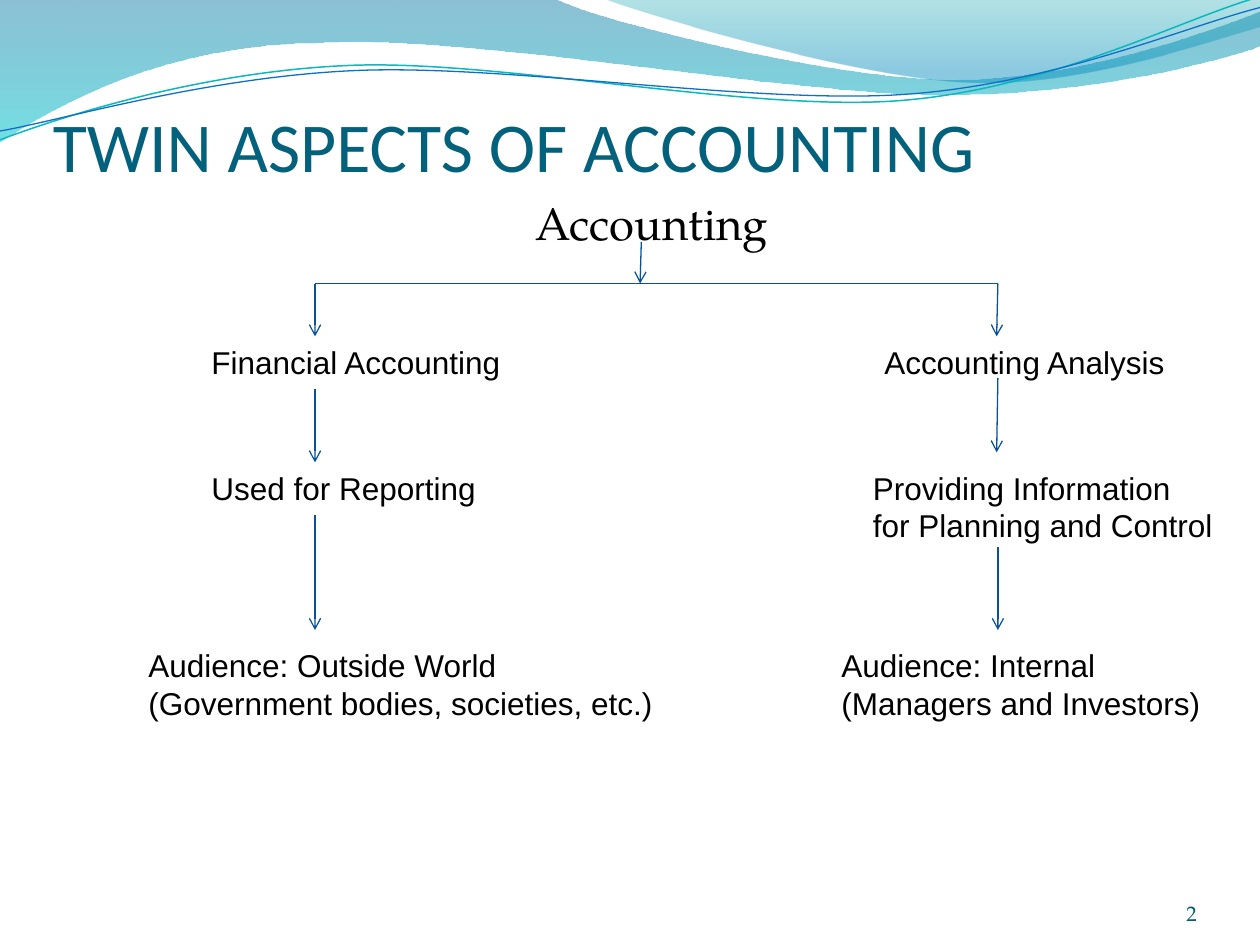
from dataclasses import dataclass
from itertools import chain, islice

from lxml import etree
from pptx import Presentation
from pptx.dml.color import RGBColor
from pptx.enum.shapes import MSO_CONNECTOR
from pptx.enum.text import MSO_ANCHOR, MSO_AUTO_SIZE, PP_ALIGN
from pptx.oxml.ns import qn
from pptx.util import Inches, Pt


@dataclass(frozen=True)
class Theme:
    title: str = "04617B"
    text: str = "000000"
    number: str = "045D75"
    arrow: str = "095295"
    wave_teal: str = "0AB8BF"
    wave_blue: str = "0F6FC6"
    title_size: int = 40
    heading_size: int = 26
    label_size: int = 18
    number_size: int = 12
    title_font: str = "Calibri"
    serif_font: str = "TeX Gyre Pagella"
    label_font: str = "Arial"


theme = Theme()


def write_text(frame, text, *, font, size, color, align=PP_ALIGN.LEFT,
               anchor=MSO_ANCHOR.TOP, insets=(0.1, 0.05, 0.1, 0.05)):
    """Fill a text frame, one paragraph per line of text."""
    frame.word_wrap = True
    frame.auto_size = MSO_AUTO_SIZE.NONE
    frame.vertical_anchor = anchor
    (frame.margin_left, frame.margin_top,
     frame.margin_right, frame.margin_bottom) = map(Inches, insets)
    frame.text = text
    for paragraph in frame.paragraphs:
        paragraph.alignment = align
        paragraph.font.name = font
        paragraph.font.size = Pt(size)
        paragraph.font.color.rgb = RGBColor.from_string(color)


def add_wave(slide, start, segments, close):
    """Draw lines (one point) and cubic curves (three points) as one freeform."""
    builder = slide.shapes.build_freeform(*map(Inches, start), scale=1)
    builder.add_line_segments([tuple(map(Inches, point)) for point in chain(*segments)], close=close)
    wave = builder.convert_to_shape()
    wave.shadow.inherit = False
    outline = next(wave._element.spPr.iter(qn("a:path")))
    lines = iter(outline.findall(qn("a:lnTo")))
    for segment in segments:
        corners = list(islice(lines, len(segment)))
        if len(segment) == 3:
            curve = outline.makeelement(qn("a:cubicBezTo"))
            corners[0].addprevious(curve)
            for corner in corners:
                curve.append(corner[0])
                outline.remove(corner)
    return wave


presentation = Presentation()
presentation.slide_width = Inches(10)
presentation.slide_height = Inches(7.5)
slide = presentation.slides.add_slide(presentation.slide_layouts[1])

# Filled waves: start, segments, gradient stops (position, colour, opacity %)
filled_waves = [
    ((0, -0.01),
     [[(4.4, -0.01)],
      [(4.76, 0.17), (6.64, 0.63), (7.58, 0.63)],
      [(8.53, 0.63), (9.58, 0.26), (10, 0.09)],
      [(10.01, 0.36)],
      [(9.83, 0.44), (8.7, 0.76), (7.46, 0.75)],
      [(6.22, 0.75), (3.82, 0.28), (2.57, 0.34)],
      [(1.29, 0.35), (0.46, 0.83), (-0.01, 1.13)],
      [(0, -0.01)]],
     [(0, "0074A1", 45), (1, "00C6CF", 55)]),
    ((4.79, -0.01),
     [[(5.09, 0.11), (6.82, 0.62), (7.69, 0.65)],
      [(8.56, 0.69), (9.61, 0.32), (10, 0.21)],
      [(10, 0)],
      [(4.79, -0.01)]],
     [(0, "00A1A9", 30), (0.8, "008BBF", 45)]),
]
for start, segments, stops in filled_waves:
    wave = add_wave(slide, start, segments, close=True)
    wave.line.fill.background()
    wave.fill.gradient()
    wave.fill.gradient_angle = 270
    for stop, (position, color, _) in zip(wave.fill.gradient_stops, stops):
        stop.position = position
        stop.color.rgb = RGBColor.from_string(color)
    colors = wave._element.spPr.iter(qn("a:srgbClr"))
    for color_element, (_, _, opacity) in zip(colors, stops):
        etree.SubElement(color_element, qn("a:alpha"), val=str(opacity * 1000))

# Thin wave lines: start, segments, colour, width
wave_lines = [
    ((0, 1.11),
     [[(0.48, 0.93), (1.58, 0.57), (2.77, 0.52)],
      [(3.95, 0.47), (5.93, 0.89), (7.13, 0.8)],
      [(8.33, 0.71), (9.38, 0.15), (9.98, -0.02)]],
     theme.wave_teal, 0.85),
    ((0, 1.04),
     [[(0.47, 0.96), (1.64, 0.61), (2.83, 0.56)],
      [(4.03, 0.51), (5.97, 0.83), (7.17, 0.75)],
      [(8.36, 0.67), (9.41, 0.21), (10, 0.06)]],
     theme.wave_blue, 0.75),
]
for start, segments, color, width in wave_lines:
    wave = add_wave(slide, start, segments, close=False)
    wave.fill.background()
    wave.line.color.rgb = RGBColor.from_string(color)
    wave.line.width = Pt(width)

# Title and root of the diagram
title = slide.shapes.title
title.left, title.top, title.width, title.height = map(Inches, (0.42, 1, 9.58, 0.48))
write_text(title.text_frame, "TWIN ASPECTS OF ACCOUNTING", font=theme.title_font,
           size=theme.title_size, color=theme.title, anchor=MSO_ANCHOR.BOTTOM,
           insets=(0, 0.05, 0, 0))

body = slide.placeholders[1]
body.left, body.top, body.width, body.height = map(Inches, (0, 1.5, 10, 5.42))
write_text(body.text_frame, "Accounting", font=theme.serif_font,
           size=theme.heading_size, color=theme.text)
properties = body.text_frame.paragraphs[0]._p.get_or_add_pPr()
properties.set("marL", str(Inches(4.15)))
properties.set("indent", "0")
properties.insert_element_before(properties.makeelement(qn("a:buNone")),
                                 "a:tabLst", "a:defRPr", "a:extLst")

# Branch labels: left, top, width, height, text
labels = [
    (1.58, 2.67, 2.58, 0.4, "Financial Accounting"),
    (6.92, 2.67, 2.67, 0.4, "Accounting Analysis"),
    (1.58, 3.67, 2.92, 0.4, "Used for Reporting"),
    (6.83, 3.67, 2.9, 0.71, "Providing Information for Planning and Control"),
    (1.08, 5.08, 4.25, 0.71, "Audience: Outside World\n(Government bodies, societies, etc.)"),
    (6.58, 5.08, 3.08, 0.71, "Audience: Internal\n(Managers and Investors)"),
]
for *box, text in labels:
    label = slide.shapes.add_textbox(*map(Inches, box))
    write_text(label.text_frame, text, font=theme.label_font,
               size=theme.label_size, color=theme.text)

number = slide.shapes.add_textbox(*map(Inches, (8.67, 6.95, 0.83, 0.4)))
write_text(number.text_frame, "2", font=theme.serif_font, size=theme.number_size,
           color=theme.number, align=PP_ALIGN.RIGHT, anchor=MSO_ANCHOR.BOTTOM,
           insets=(0, 0, 0, 0))

# Connectors: start x, start y, end x, end y, arrowhead
left_x, right_x, branch_y = 2.5, 7.92, 2.25
connectors = [
    (left_x, branch_y, right_x, branch_y, False),
    (5.09, 1.92, 5.08, branch_y, True),
    (left_x, branch_y, left_x, 2.67, True),
    (right_x, branch_y, 7.91, 2.67, True),
    (left_x, 3.09, left_x, 3.67, True),
    (right_x, 3, 7.91, 3.59, True),
    (left_x, 4.09, left_x, 5, True),
    (right_x, 4.34, right_x, 5, True),
]
for *ends, has_arrow in connectors:
    connector = slide.shapes.add_connector(MSO_CONNECTOR.STRAIGHT, *map(Inches, ends))
    connector.line.color.rgb = RGBColor.from_string(theme.arrow)
    connector.line.width = Pt(0.75)
    if has_arrow:
        etree.SubElement(connector.line._get_or_add_ln(), qn("a:tailEnd"), type="arrow")
    etree.SubElement(connector._element.spPr, qn("a:effectLst"))

presentation.save("out.pptx")
